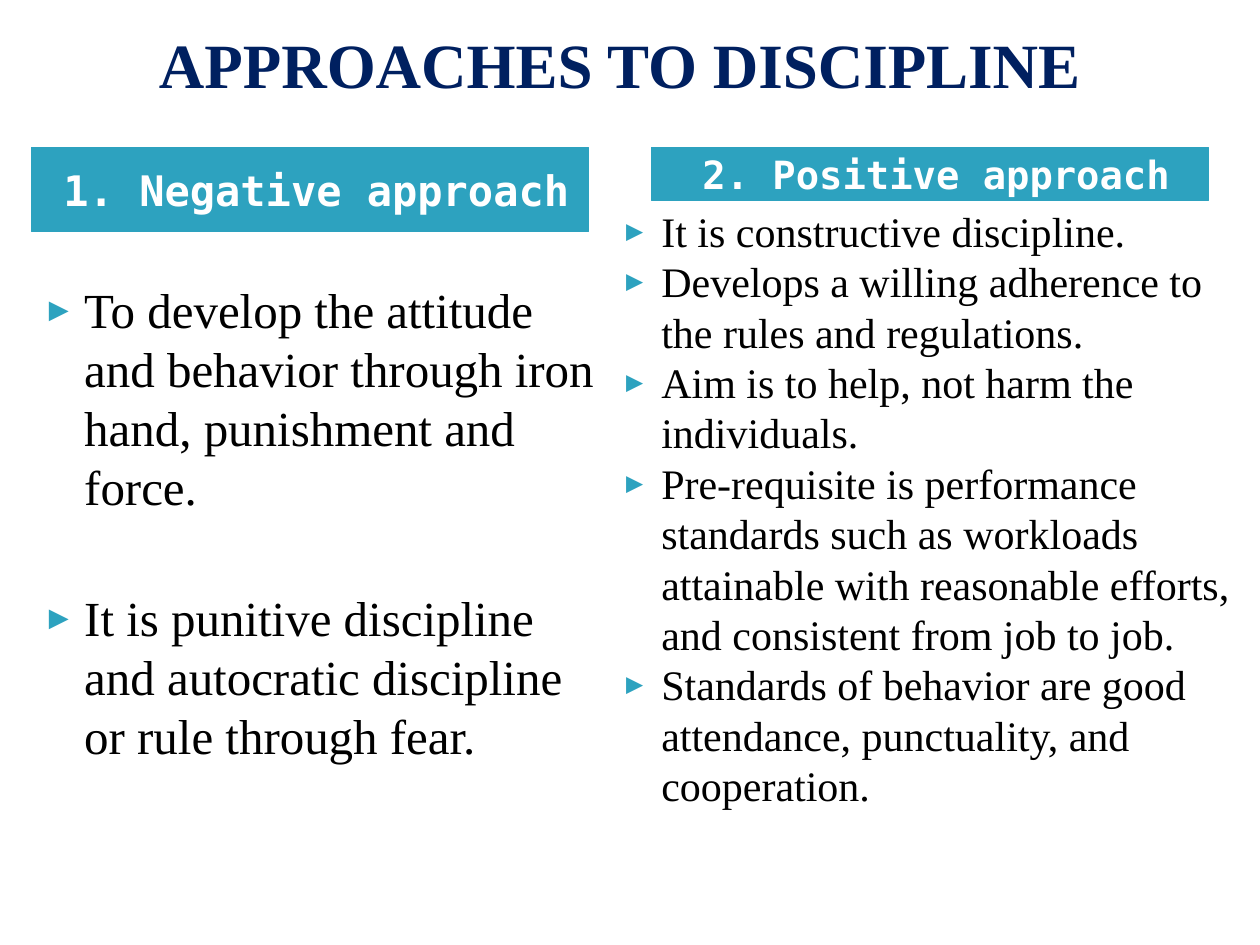
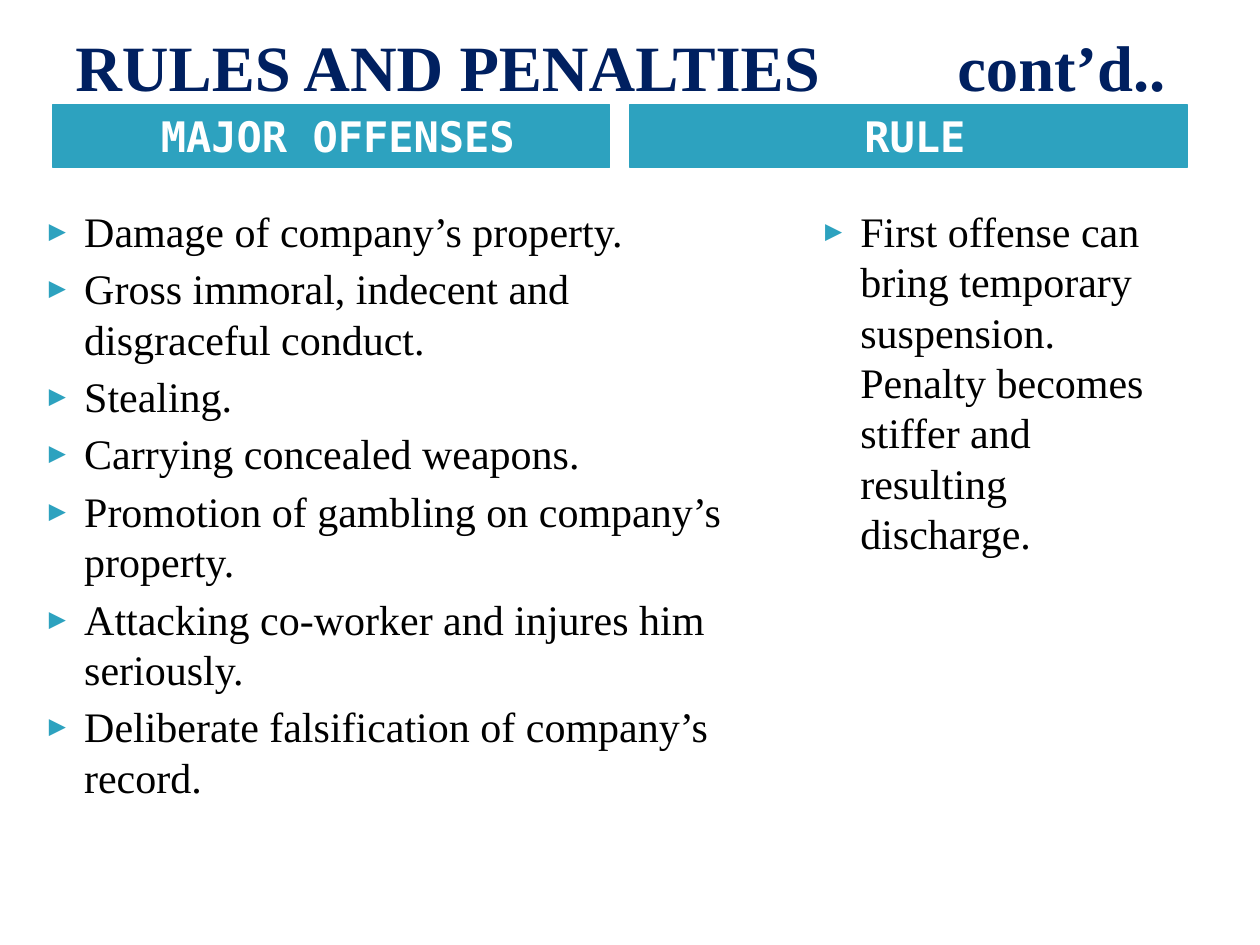
from lxml import etree
from pptx import Presentation
from pptx.dml.color import RGBColor
from pptx.enum.shapes import MSO_SHAPE
from pptx.enum.text import MSO_ANCHOR, PP_ALIGN
from pptx.oxml.ns import qn
from pptx.util import Inches, Pt

RECT = MSO_SHAPE.RECTANGLE
MIDDLE = MSO_ANCHOR.MIDDLE
LEFT, CENTER = PP_ALIGN.LEFT, PP_ALIGN.CENTER
SERIF, MONO = "Times New Roman", "DejaVu Sans Mono"
COLORS = {"title": "002060", "band": "2DA2BF", "white": "FFFFFF", "text": "000000"}
BAND_W = 4.42

SLIDES = [
    {
        "title": ("APPROACHES TO DISCIPLINE", (0.42, 0, 9, 1), 36, CENTER),
        "bands": [
            ("1. Negative approach", 0.25, 1.17, 0.67, 24),
            ("2. Positive approach", 5.17, 1.17, 0.42, 22.2),
        ],
        "lists": [
            ((0.17, 2.17, 4.75, 5.33), 28, 41.5, [
                "To develop the attitude and behavior through iron hand, punishment and force.",
                "It is punitive discipline and autocratic discipline or rule through fear.",
            ]),
            ((4.75, 1.58, 5.25, 5.92), 24, 0, [
                "It is constructive discipline.",
                "Develops a willing adherence to the rules and regulations.",
                "Aim is to help, not harm the individuals.",
                "Pre-requisite is performance standards such as workloads attainable "
                "with reasonable efforts, and consistent from job to job.",
                "Standards of behavior are good attendance, punctuality, and cooperation.",
            ]),
        ],
    },
    {
        "title": ("RULES AND PENALTIES \tcont’d..", (0.5, 0.17, 9, 0.7), 36.9, LEFT),
        "bands": [
            ("MAJOR OFFENSES", 0.42, 0.83, 0.5, 24),
            ("RULE", 5, 0.83, 0.5, 24),
        ],
        "lists": [
            ((0.17, 1.58, 5.83, 5.59), 24, 4, [
                "Damage of company’s property.",
                "Gross immoral, indecent and disgraceful conduct.",
                "Stealing.",
                "Carrying concealed weapons.",
                "Promotion of gambling on company’s property.",
                "Attacking co-worker and injures him seriously.",
                "Deliberate falsification of company’s record.",
            ]),
            ((6.33, 1.58, 3.17, 5.34), 24, 0, [
                "First offense can bring temporary suspension. Penalty becomes "
                "stiffer and resulting discharge.",
            ]),
        ],
    },
]


def style(para, face, size, color, bold):
    for run in para.runs:
        run.font.name = face
        run.font.size = Pt(size)
        run.font.bold = bold
        run.font.color.rgb = RGBColor.from_string(COLORS[color])


def bullet(para):
    props = para._p.get_or_add_pPr()
    props.set("marL", str(Inches(0.4)))
    props.set("indent", str(Inches(-0.28)))
    tint = etree.SubElement(props, qn("a:buClr"))
    etree.SubElement(tint, qn("a:srgbClr"), val=COLORS["band"])
    etree.SubElement(props, qn("a:buSzPct"), val="68000")
    etree.SubElement(props, qn("a:buFont"), typeface=MONO)
    etree.SubElement(props, qn("a:buChar"), char="▶")


deck = Presentation()
deck.slide_width, deck.slide_height = Inches(10), Inches(7.5)

for page in SLIDES:
    slide = deck.slides.add_slide(deck.slide_layouts[6])

    text, place, size, align = page["title"]
    frame = slide.shapes.add_textbox(*map(Inches, place)).text_frame
    frame.word_wrap = True
    frame.vertical_anchor = MIDDLE
    para = frame.paragraphs[0]
    para.text = text
    para.alignment = align
    if "\t" in text:
        tabs = etree.SubElement(para._p.get_or_add_pPr(), qn("a:tabLst"))
        etree.SubElement(tabs, qn("a:tab"), pos=str(Inches(7)), algn="l")
    style(para, SERIF, size, "title", True)

    for text, left, top, height, size in page["bands"]:
        band = slide.shapes.add_shape(RECT, *map(Inches, (left, top, BAND_W, height)))
        band.shadow.inherit = False
        band.fill.solid()
        band.fill.fore_color.rgb = RGBColor.from_string(COLORS["band"])
        band.line.color.rgb = RGBColor.from_string(COLORS["band"])
        band.line.width = Pt(0.75)
        frame = band.text_frame
        frame.word_wrap = True
        frame.vertical_anchor = MIDDLE
        frame.margin_left = Inches(0.2)
        para = frame.paragraphs[0]
        para.text = text
        para.alignment = CENTER
        style(para, MONO, size, "white", True)

    for place, size, gap, items in page["lists"]:
        frame = slide.shapes.add_textbox(*map(Inches, place)).text_frame
        frame.word_wrap = True
        frame.text = "\n".join(items)
        for i, para in enumerate(frame.paragraphs):
            bullet(para)
            para.space_before = Pt(gap if i else 0)
            style(para, SERIF, size, "text", False)

deck.save("out.pptx")
